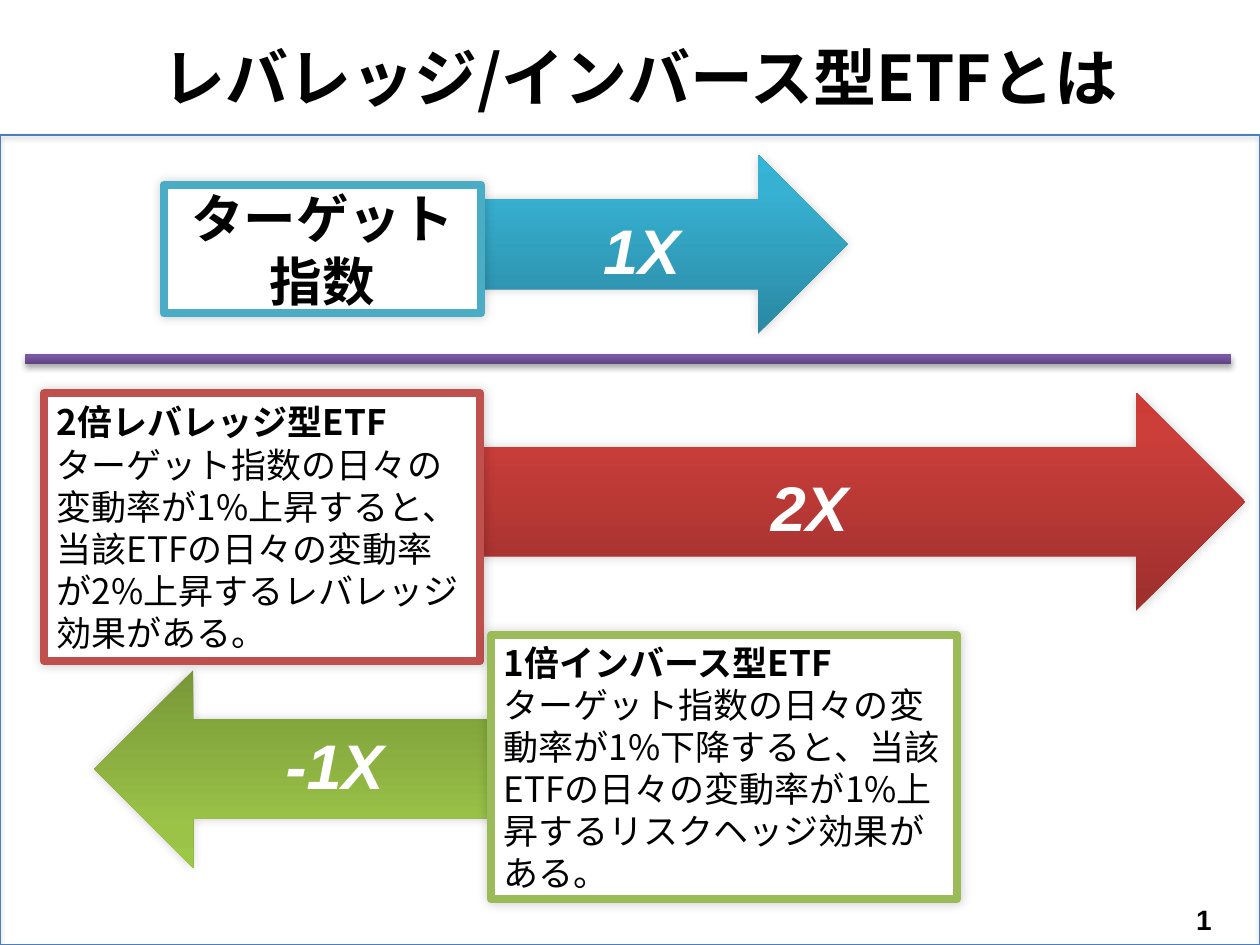
import copy

import pptx
import pptx.dml.color
import pptx.enum.shapes
import pptx.enum.text
import pptx.oxml
import pptx.oxml.ns
import pptx.util
from pptx.util import Cm

SHAPE = pptx.enum.shapes.MSO_SHAPE
ALIGN = pptx.enum.text.PP_ALIGN
ANCHOR = pptx.enum.text.MSO_ANCHOR
qn = pptx.oxml.ns.qn

COLOURS = {
    "text": "000000", "paper": "FFFFFF", "frame": "4B7EBC",
    "red": "C0504D", "green": "9BBB59", "blue": "4BACC6",
}
# Gradient stops at GRADIENT_POSITIONS, running from bottom to top
GRADIENTS = {
    "purple": ("5F4480", "7B58A6", "7C57A8"),
    "red": ("9C2F2D", "CB3E3A", "CE3B37"),
    "green": ("779737", "9BC348", "9DC746"),
    "blue": ("2A88A2", "37B1D2", "34B4D6"),
}
GRADIENT_POSITIONS = (0, 0.8, 1)
# Opacity in percent, blur and distance in points, direction in degrees
SHADOWS = {
    "frame": (38, 3.1, 1.6, 90),
    "divider": (35, 3.1, 1.8, 90),
    "soft": (20, 6, 0, 225),
}
JAPANESE, LATIN = "Noto Sans CJK JP", "Arial"
FORMATS = {
    "title": {"name": JAPANESE, "size": 36, "bold": True},
    "index": {"name": JAPANESE, "size": 30, "bold": True},
    "heading": {"name": JAPANESE, "size": 20, "bold": True},
    "body": {"name": JAPANESE, "size": 20, "bold": False},
    "factor": {"name": LATIN, "size": 36, "bold": True, "italic": True},
    "number": {"name": LATIN, "size": 16, "bold": True},
}

# Places are left, top, width, height in centimetres
FRAME = (0, 2.72, 25.4, 16.33)
DIVIDER = (0.51, 7.14, 24.31, 0.2)
ETF_TYPES = [
    {
        "colour": "red", "rotation": 0,
        "arrow": (9.5, 7.92, 15.6, 4.39),
        "box": (0.89, 7.92, 8.79, 5.41),
        "label": (15.29, 9.32, 2.39, 1.8),
        "factor": "2X", "align": ALIGN.LEFT,
        "lines": [
            ("heading", "2倍レバレッジ型ETF"),
            ("body", "ターゲット指数の日々の変動率が1%上昇すると、当該ETFの"
                     "日々の変動率が2%上昇するレバレッジ効果がある。"),
        ],
    },
    {
        "colour": "green", "rotation": 180,
        "arrow": (1.9, 13.51, 8, 3.99),
        "box": (9.9, 12.8, 9.4, 5.33),
        "label": (5.51, 14.53, 3, 1.8),
        "factor": "-1X", "align": ALIGN.LEFT,
        "lines": [
            ("heading", "1倍インバース型ETF"),
            ("body", "ターゲット指数の日々の変動率が1%下降すると、当該ETFの"
                     "日々の変動率が1%上昇するリスクヘッジ効果がある。"),
        ],
    },
    {
        "colour": "blue", "rotation": 0,
        "arrow": (9.5, 3.12, 7.59, 3.61),
        "box": (3.3, 3.73, 6.4, 2.59),
        "label": (11.91, 4.14, 2.39, 1.8),
        "factor": "1X", "align": ALIGN.CENTER,
        "lines": [("index", "ターゲット指数")],
    },
]
CAPTIONS = [
    ("title", "レバレッジ/インバース型ETFとは", (1.5, 0.53, 22.81, 2.01)),
    ("number", "1", (21.31, 18.03, 5.92, 1.02)),
]


def rgb(value):
    return pptx.dml.color.RGBColor.from_string(value)


def write(shape, lines, align, anchor, colour="text"):
    frame = shape.text_frame
    frame.word_wrap = True
    frame.vertical_anchor = anchor
    for index, (style, text) in enumerate(lines):
        para = frame.paragraphs[0] if index == 0 else frame.add_paragraph()
        para.alignment = align
        span = para.add_run()
        span.text = text
        for key, value in FORMATS[style].items():
            setattr(span.font, key, pptx.util.Pt(value) if key == "size" else value)
        span.font.color.rgb = rgb(COLOURS[colour])
        east_asian = pptx.oxml.parse_xml(
            f'<a:ea {pptx.oxml.ns.nsdecls("a")} typeface="{FORMATS[style]["name"]}"/>')
        span._r.get_or_add_rPr().append(east_asian)


def add_shadowed(shapes, kind, place, shadow):
    shape = shapes.add_shape(kind, *map(Cm, place))
    shape.shadow.inherit = False
    opacity, blur, distance, direction = SHADOWS[shadow]
    shape._element.spPr.find(qn("a:effectLst")).append(pptx.oxml.parse_xml(
        f'<a:outerShdw {pptx.oxml.ns.nsdecls("a")} blurRad="{pptx.util.Pt(blur)}" '
        f'dist="{pptx.util.Pt(distance)}" dir="{direction * 60000}" rotWithShape="0">'
        f'<a:srgbClr val="000000"><a:alpha val="{opacity * 1000}"/></a:srgbClr>'
        '</a:outerShdw>'))
    return shape


def outline(shape, colour, width):
    shape.line.color.rgb = rgb(COLOURS[colour])
    shape.line.width = pptx.util.Pt(width)


def add_graded(shapes, kind, place, shadow, gradient):
    shape = add_shadowed(shapes, kind, place, shadow)
    shape.line.fill.background()
    shape.fill.gradient()
    shape.fill.gradient_angle = 90
    stop_list = next(shape._element.spPr.iter(qn("a:gsLst")))
    stop_list.append(copy.deepcopy(stop_list[-1]))
    stops = shape.fill.gradient_stops
    for stop, position, value in zip(stops, GRADIENT_POSITIONS, GRADIENTS[gradient]):
        stop.position = position
        stop.color.rgb = rgb(value)
    return shape


def add_etf_type(page, item):
    """Group an arrow, its explanation box and its factor label."""
    shapes = page.shapes.add_group_shape().shapes
    arrow = add_graded(shapes, SHAPE.RIGHT_ARROW, item["arrow"], "soft", item["colour"])
    arrow.rotation = item["rotation"]
    box = add_shadowed(shapes, SHAPE.RECTANGLE, item["box"], "soft")
    box.fill.solid()
    box.fill.fore_color.rgb = rgb(COLOURS["paper"])
    outline(box, item["colour"], 4.5)
    write(box, item["lines"], item["align"], ANCHOR.MIDDLE)
    label = shapes.add_textbox(*map(Cm, item["label"]))
    write(label, [("factor", item["factor"])], ALIGN.LEFT, ANCHOR.TOP, "paper")


def main():
    deck = pptx.Presentation()
    deck.slide_width, deck.slide_height = Cm(25.4), Cm(19.05)
    page = deck.slides.add_slide(deck.slide_layouts[6])
    frame = add_shadowed(page.shapes, SHAPE.RECTANGLE, FRAME, "frame")
    frame.fill.background()
    outline(frame, "frame", 0.75)
    add_graded(page.shapes, SHAPE.RECTANGLE, DIVIDER, "divider", "purple")
    for item in ETF_TYPES:
        add_etf_type(page, item)
    for style, text, place in CAPTIONS:
        caption = page.shapes.add_textbox(*map(Cm, place))
        write(caption, [(style, text)], ALIGN.CENTER, ANCHOR.MIDDLE)
    deck.save("out.pptx")


if __name__ == "__main__":
    main()
